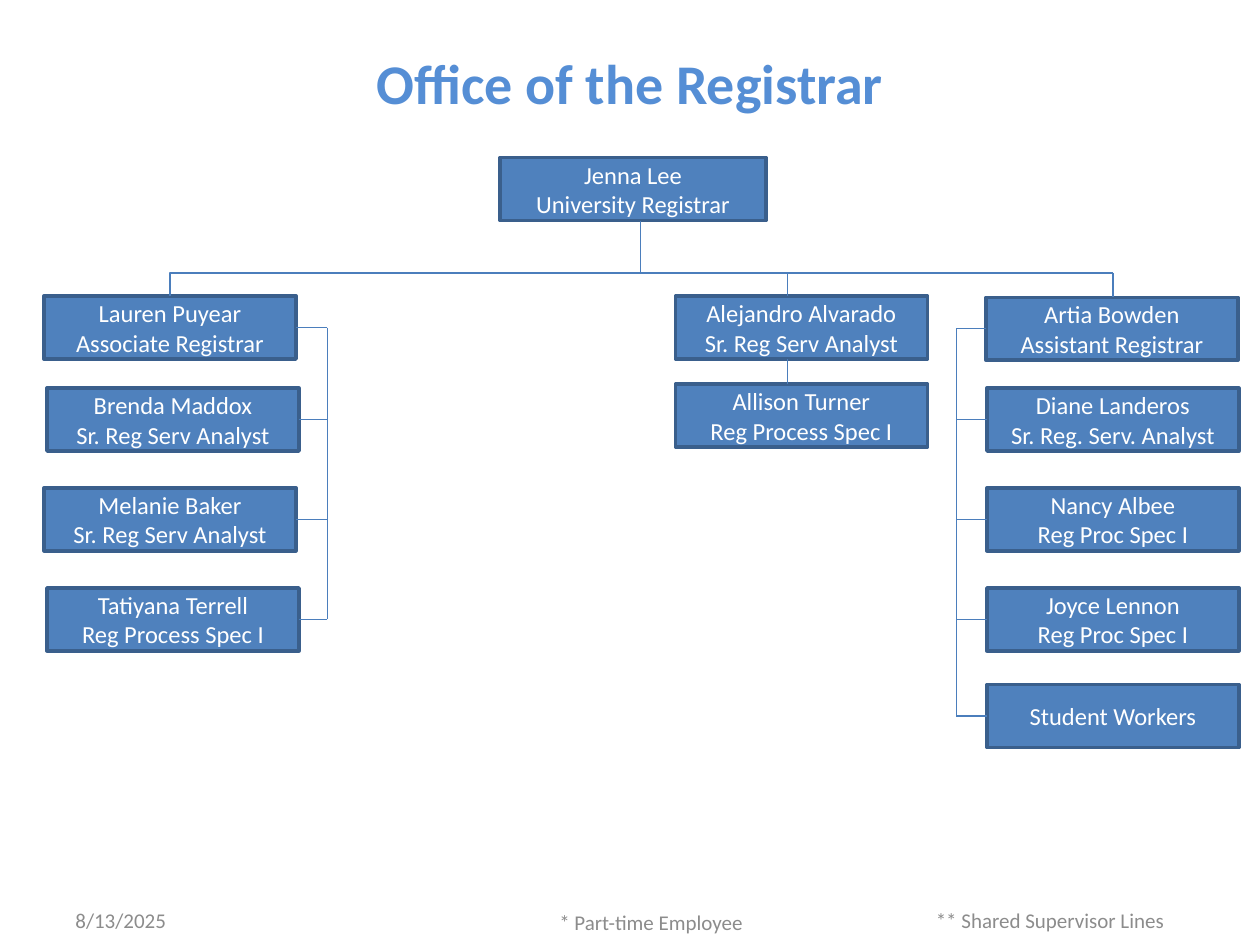
from lxml import etree
from pptx import Presentation
from pptx.dml.color import RGBColor
from pptx.enum.shapes import MSO_CONNECTOR, MSO_SHAPE
from pptx.enum.text import MSO_ANCHOR, PP_ALIGN
from pptx.oxml.ns import qn
from pptx.util import Pt

RECTANGLE = MSO_SHAPE.RECTANGLE
STRAIGHT = MSO_CONNECTOR.STRAIGHT
ELBOW = MSO_CONNECTOR.ELBOW
MIDDLE = MSO_ANCHOR.MIDDLE
LEFT = PP_ALIGN.LEFT
CENTER = PP_ALIGN.CENTER

WHITE = RGBColor(0xFF, 0xFF, 0xFF)
TITLE_BLUE = RGBColor(0x55, 0x8E, 0xD5)
BOX_BLUE = RGBColor(0x4F, 0x81, 0xBD)
BORDER_BLUE = RGBColor(0x3A, 0x5F, 0x8C)
LINE_BLUE = RGBColor(0x4B, 0x7E, 0xBC)
FOOTER_GRAY = RGBColor(0x8C, 0x8C, 0x8C)

FONT = "Calibri"
BOX_WIDTH = 144
BOX_HEIGHT = 36
BUS_Y = 156
LEFT_RAIL = 187
RIGHT_RAIL = 546.5
RIGHT_X = 564

LEFT_TEAM = [
    (25.2, 169.2, "Lauren Puyear", "Associate Registrar"),
    (26.9, 221.8, "Brenda Maddox", "Sr. Reg Serv Analyst"),
    (25.2, 278.8, "Melanie Baker", "Sr. Reg Serv Analyst"),
    (26.9, 336, "Tatiyana Terrell", "Reg Process Spec I"),
]
MIDDLE_TEAM = [
    (386, 169.2, "Alejandro Alvarado", "Sr. Reg Serv Analyst"),
    (386, 219.5, "Allison Turner", "Reg Process Spec I"),
]
RIGHT_TEAM = [
    (563.4, 169.9, "Artia Bowden", "Assistant Registrar"),
    (RIGHT_X, 221.8, "Diane Landeros", "Sr. Reg. Serv. Analyst"),
    (RIGHT_X, 278.8, "Nancy Albee", "Reg Proc Spec I"),
    (RIGHT_X, 336, "Joyce Lennon", "Reg Proc Spec I"),
    (RIGHT_X, 391.2, "Student Workers"),
]


def write_lines(shape, lines, size, color, alignment=CENTER, bold=False):
    frame = shape.text_frame
    frame.word_wrap = True
    frame.vertical_anchor = MIDDLE
    for index, line in enumerate(lines):
        paragraph = frame.add_paragraph() if index else frame.paragraphs[0]
        paragraph.alignment = alignment
        run = paragraph.add_run()
        run.text = line
        run.font.name = FONT
        run.font.size = Pt(size)
        run.font.bold = bold
        run.font.color.rgb = color


def add_label(slide, x, y, width, height, text, size, color, **style):
    label = slide.shapes.add_textbox(Pt(x), Pt(y), Pt(width), Pt(height))
    write_lines(label, [text], size, color, **style)


def add_box(slide, x, y, *lines, width=BOX_WIDTH):
    box = slide.shapes.add_shape(RECTANGLE, Pt(x), Pt(y), Pt(width), Pt(BOX_HEIGHT))
    box.shadow.inherit = False
    box.fill.solid()
    box.fill.fore_color.rgb = BOX_BLUE
    box.line.color.rgb = BORDER_BLUE
    box.line.width = Pt(2)
    write_lines(box, lines, 14, WHITE)


def add_line(slide, x1, y1, x2, y2, kind=STRAIGHT):
    connector = slide.shapes.add_connector(kind, Pt(x1), Pt(y1), Pt(x2), Pt(y2))
    connector.line.color.rgb = LINE_BLUE
    connector.line.width = Pt(0.75)
    etree.SubElement(connector._element.spPr, qn("a:effectLst"))
    return connector


def add_corner(slide, x1, y1, x2, y2):
    connector = add_line(slide, x1, y1, x2, y2, ELBOW)
    connector._element.spPr.find(qn("a:prstGeom")).set("prst", "bentConnector2")


def add_team(slide, team):
    for member in team:
        add_box(slide, *member)


def add_rail(slide, team, rail_x, edge):
    centers = [y + BOX_HEIGHT / 2 for _, y, *_ in team]
    add_line(slide, rail_x, centers[0], rail_x, centers[-1])
    for (x, *_), center in zip(team, centers):
        add_line(slide, rail_x, center, x + edge, center)


def main():
    presentation = Presentation()
    presentation.slide_width = Pt(720)
    presentation.slide_height = Pt(540)
    slide = presentation.slides.add_slide(presentation.slide_layouts[6])

    add_label(slide, 72, 18, 576, 57.6, "Office of the Registrar", 32, TITLE_BLUE, bold=True)
    add_box(slide, 285.8, 90, "Jenna Lee", "University Registrar", width=152)
    for team in (LEFT_TEAM, MIDDLE_TEAM, RIGHT_TEAM):
        add_team(slide, team)

    add_line(slide, 366, 126, 366, BUS_Y)
    add_line(slide, 248, BUS_Y, 636, BUS_Y)
    add_corner(slide, 248, BUS_Y, 97.2, 169.2)
    add_line(slide, 450, BUS_Y, 450, 169.2)
    add_line(slide, 636, BUS_Y, 636, 169.9)
    add_line(slide, 450, 205.2, 450, 219.5)
    add_rail(slide, LEFT_TEAM, LEFT_RAIL, BOX_WIDTH)
    add_rail(slide, RIGHT_TEAM, RIGHT_RAIL, 0)

    add_label(slide, 36, 511.2, 168, 28.8, "8/13/2025", 12, FOOTER_GRAY, alignment=LEFT)
    add_label(slide, 258, 512.6, 228, 28.8, "* Part-time Employee", 12, FOOTER_GRAY)
    add_label(slide, 486, 511.2, 228, 28.8, "** Shared Supervisor Lines", 12, FOOTER_GRAY)

    presentation.save("out.pptx")


if __name__ == "__main__":
    main()
